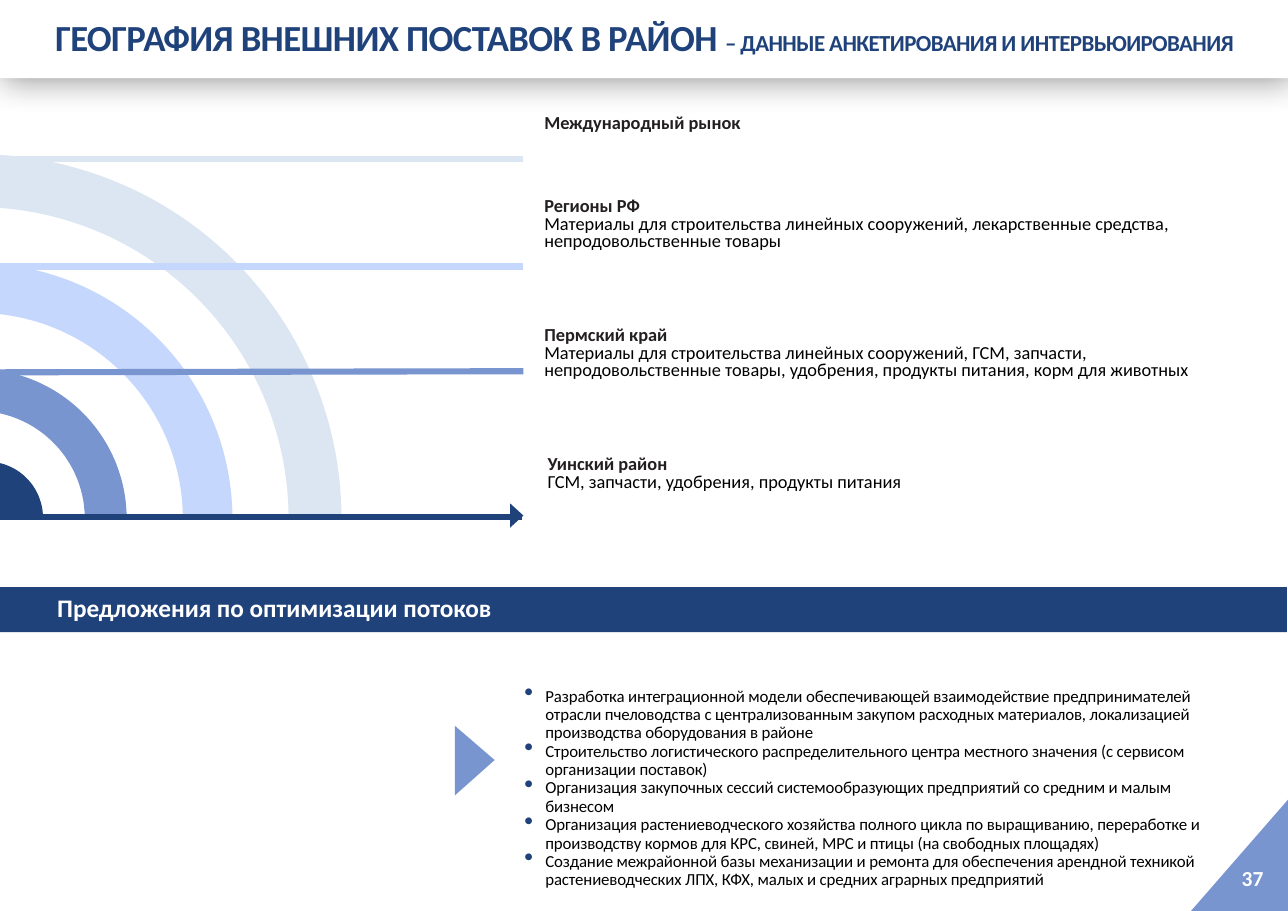
"""Build a slide on the geography of outside supplies to a district."""
from dataclasses import dataclass
from math import acos, asin, cos, pi, sin

from lxml.etree import SubElement as Sub
from pptx import Presentation
from pptx.dml.color import RGBColor as RGB
from pptx.enum.shapes import MSO_CONNECTOR as Link, MSO_SHAPE as Kind
from pptx.enum.text import MSO_ANCHOR as Anchor, MSO_AUTO_SIZE as Fit, PP_ALIGN as Align
from pptx.oxml.ns import qn
from pptx.util import Inches, Pt

NAVY = RGB(0x1F, 0x42, 0x7B)
BLUE = RGB(0x78, 0x95, 0xD0)
SKY = RGB(0xC5, 0xD7, 0xFC)
PALE = RGB(0xDC, 0xE6, 0xF2)
INK = RGB(0x23, 0x1F, 0x20)
BLACK = RGB(0, 0, 0)
WHITE = RGB(255, 255, 255)

WIDE, HIGH = 11.69, 8.27
HUB_X, HUB_Y = -0.21, 4.71


@dataclass
class Ring:
    inner: float
    outer: float
    color: RGB


@dataclass
class Rule:
    start: float
    end: float
    right: float
    color: RGB


@dataclass
class Note:
    left: float
    top: float
    width: float
    height: float
    head: str
    body: str = ""


RINGS = [Ring(0.98, 1.36, BLUE), Ring(1.87, 2.32, SKY), Ring(2.83, 3.31, PALE)]
RULES = [
    Rule(1.44, 1.44, 4.75, PALE),
    Rule(4.69, 4.69, 4.74, NAVY),
    Rule(3.38, 3.37, 4.75, BLUE),
    Rule(2.42, 2.42, 4.75, SKY),
]
NOTES = [
    Note(4.93, 1.05, 6.12, 0.17, "Международный рынок"),
    Note(4.93, 1.8, 6.12, 0.49, "Регионы РФ",
         "Материалы для строительства линейных сооружений, лекарственные средства, "
         "непродовольственные товары"),
    Note(4.93, 2.97, 6.12, 0.49, "Пермский край",
         "Материалы для строительства линейных сооружений, ГСМ, запчасти, "
         "непродовольственные товары, удобрения, продукты питания, корм для животных"),
    Note(4.96, 4.14, 6.73, 0.34, "Уинский район",
         "ГСМ, запчасти, удобрения, продукты питания"),
]
PLANS = [
    "Разработка интеграционной модели обеспечивающей взаимодействие предпринимателей "
    "отрасли пчеловодства с централизованным закупом расходных материалов, локализацией "
    "производства оборудования в районе",
    "Строительство логистического распределительного центра местного значения "
    "(с сервисом организации поставок)",
    "Организация закупочных сессий системообразующих предприятий со средним и малым бизнесом",
    "Организация растениеводческого хозяйства полного цикла по выращиванию, переработке и "
    "производству кормов для КРС, свиней, МРС и птицы (на свободных площадях)",
    "Создание межрайонной базы механизации и ремонта для обеспечения арендной техникой "
    "растениеводческих ЛПХ, КФХ, малых и средних аграрных предприятий",
]


def paint(shape, color: RGB):
    shape.shadow.inherit = False
    shape.fill.solid()
    shape.fill.fore_color.rgb = color
    shape.line.fill.background()
    return shape


def block(slide, kind: Kind, left: float, top: float, width: float, height: float, color: RGB):
    size = map(Inches, (left, top, width, height))
    return paint(slide.shapes.add_shape(kind, *size), color)


def outline(slide, points: list, color: RGB):
    first, *rest = [(Inches(x), Inches(y)) for x, y in points]
    form = slide.shapes.build_freeform(*first)
    form.add_line_segments(rest)
    return paint(form.convert_to_shape(), color)


def arc(hub_x: float, hub_y: float, radius: float, steps: int = 48) -> list:
    top = acos(-hub_x / radius)
    turns = [top * (1 - i / steps) for i in range(steps + 1)]
    return [(hub_x + radius * cos(t), hub_y - radius * sin(t)) for t in turns]


def rule(slide, item: Rule):
    ends = map(Inches, (0, item.start, item.right, item.end))
    line = slide.shapes.add_connector(Link.STRAIGHT, *ends)
    line.line.color.rgb = item.color
    line.line.width = Pt(4)
    Sub(line._element.spPr, qn("a:effectLst"))


def frame(shape, inset: tuple = (0, 0.01, 0, 0), grow: bool = True):
    area = shape.text_frame
    area.word_wrap = True
    area.vertical_anchor = Anchor.TOP
    area.auto_size = Fit.SHAPE_TO_FIT_TEXT if grow else Fit.NONE
    area.margin_left, area.margin_top, area.margin_right, area.margin_bottom = map(Inches, inset)
    return area


def box(slide, left: float, top: float, width: float, height: float, **form):
    size = map(Inches, (left, top, width, height))
    return frame(slide.shapes.add_textbox(*size), **form)


def write(area, text: str, *, size: float, color: RGB, bold: bool = False, track: int = 0,
          lead: float = 0, before: float = 0, left: float = 0.01, hang: float = 0,
          dot: bool = False, join: bool = False):
    fresh = join or not area.paragraphs[-1].runs
    para = area.paragraphs[-1] if fresh else area.add_paragraph()
    run = para.add_run()
    run.text = text
    font = run.font
    font.name, font.size, font.bold = "Calibri", Pt(size), bold
    font.color.rgb = color
    if track:
        run._r.get_or_add_rPr().set("spc", str(track))
    if join:
        return
    para.alignment = Align.LEFT
    para.space_before = Pt(before)
    if lead:
        para.line_spacing = Pt(lead)
    props = para._p.get_or_add_pPr()
    props.set("marL", str(Inches(left)))
    props.set("indent", str(Inches(hang)))
    if dot:
        Sub(Sub(props, qn("a:buClr")), qn("a:srgbClr"), val=str(NAVY))
        Sub(props, qn("a:buSzPct"), val="155000")
        Sub(props, qn("a:buChar"), char="•")


def header(slide):
    bar = block(slide, Kind.RECTANGLE, 0, 0, WIDE, 0.71, WHITE)
    glow = Sub(bar._element.spPr.find(qn("a:effectLst")), qn("a:outerShdw"),
               blurRad=str(Pt(22)), dist=str(Pt(3)), dir="2700000", rotWithShape="0")
    Sub(Sub(glow, qn("a:srgbClr"), val=str(BLACK)), qn("a:alpha"), val="40000")
    title = slide.shapes.title
    title._element.addprevious(bar._element)
    title.left, title.top, title.width, title.height = map(Inches, (0.49, 0.12, 11.19, 0.42))
    area = frame(title)
    write(area, "ГЕОГРАФИЯ ВНЕШНИХ ПОСТАВОК В РАЙОН ", size=24, color=NAVY, bold=True,
          track=-40, before=1)
    write(area, "– ДАННЫЕ АНКЕТИРОВАНИЯ И ИНТЕРВЬЮИРОВАНИЯ", size=15, color=NAVY, bold=True,
          track=-40, join=True)


def market(slide):
    for ring in RINGS:
        inner = arc(HUB_X, HUB_Y, ring.inner)
        outline(slide, inner + arc(HUB_X, HUB_Y, ring.outer)[::-1], ring.color)
    for item in RULES:
        rule(slide, item)
    outline(slide, [(0, 4.7)] + arc(-0.12, 4.7, 0.51), NAVY)
    block(slide, Kind.ISOSCELES_TRIANGLE, 4.58, 4.62, 0.22, 0.12, NAVY).rotation = 90
    for note in NOTES:
        area = box(slide, note.left, note.top, note.width, note.height)
        write(area, note.head, size=12, color=INK, bold=True, lead=11, before=1)
        if note.body:
            write(area, note.body, size=12, color=BLACK, lead=11, before=1)


def advice(slide):
    block(slide, Kind.RECTANGLE, 0, 5.33, 11.68, 0.41, NAVY)
    area = box(slide, 0.51, 5.41, 8.77, 0.25, inset=(0, 0.02, 0, 0))
    write(area, "Предложения по оптимизации потоков", size=16.5, color=WHITE, bold=True,
          lead=16, before=1.2)
    outline(slide, [(4.13, 6.59), (4.13, 7.22), (4.49, 6.9)], BLUE)
    area = box(slide, 4.75, 6.23, 6.32, 1.87)
    for plan in PLANS:
        write(area, plan, size=11, color=BLACK, track=-10, lead=12, left=0.2, hang=-0.19, dot=True)


def main():
    deck = Presentation()
    deck.slide_width, deck.slide_height = Inches(WIDE), Inches(HIGH)
    slide = deck.slides.add_slide(deck.slide_layouts[5])
    outline(slide, [(WIDE, 7.26), (10.81, HIGH), (WIDE, HIGH)], BLUE)
    header(slide)
    market(slide)
    advice(slide)
    area = box(slide, 11.2, 7.8, 0.48, 0.47, inset=(0, 0.05, 0.1, 0.05), grow=False)
    write(area, "37", size=14, color=WHITE, bold=True, before=2.1, left=0.07)
    deck.save("out.pptx")


if __name__ == "__main__":
    main()
